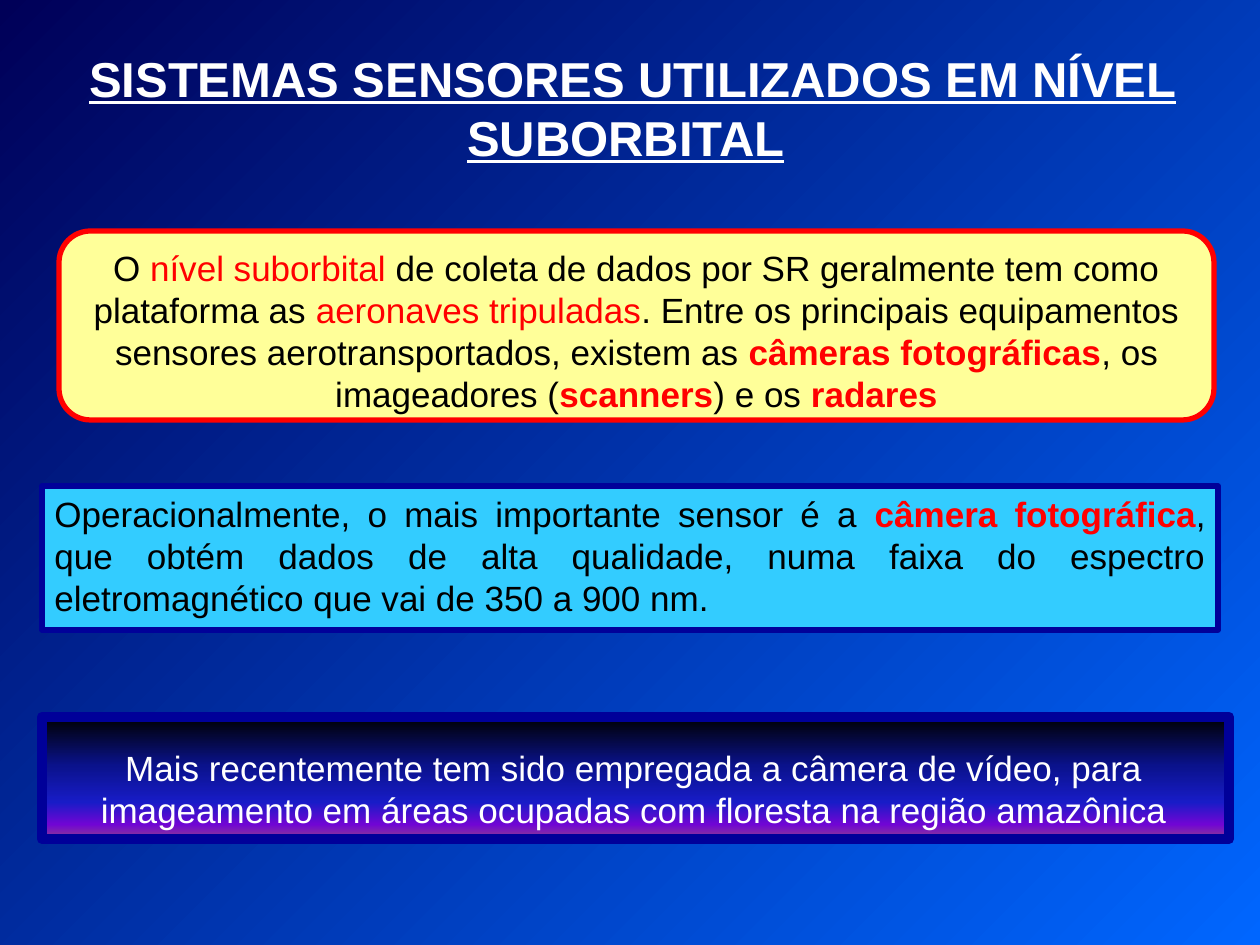
from pptx import Presentation
from pptx.dml.color import RGBColor
from pptx.enum.shapes import MSO_SHAPE
from pptx.enum.text import MSO_ANCHOR, PP_ALIGN
from pptx.oxml.ns import qn
from pptx.util import Emu, Pt
from lxml.etree import SubElement

PX = 914400 / 126
WHITE, BLACK, RED = "FFFFFF", "000000", "FF0000"


def px(n):
    return Emu(round(n * PX))


def rgb(color):
    return RGBColor.from_string(color)


def set_gradient(fill, element, stops, angle):
    """Fill with (percent, colour) stops; the angle runs clockwise."""
    fill.gradient()
    fill.gradient_angle = 360 - angle
    stop_list = next(element.iter(qn("a:gsLst")))
    for old in list(stop_list):
        stop_list.remove(old)
    for percent, color in stops:
        stop = SubElement(stop_list, qn("a:gs"), pos=str(percent * 1000))
        SubElement(stop, qn("a:srgbClr"), val=color)


class Deck:
    font = "Arial"

    def __init__(self, width, height):
        self.prs = Presentation()
        self.prs.slide_width, self.prs.slide_height = px(width), px(height)
        self.s = self.prs.slides.add_slide(self.prs.slide_layouts[6])

    def background(self, stops, angle):
        set_gradient(self.s.background.fill, self.s._element, stops, angle)

    def box(self, kind, rect, line, weight, fill=None):
        sp = self.s.shapes.add_shape(kind, *map(px, rect))
        sp.shadow.inherit = False
        sp.line.color.rgb = rgb(line)
        sp.line.width = Pt(weight)
        if fill:
            sp.fill.solid()
            sp.fill.fore_color.rgb = rgb(fill)
        return sp

    def gradient_box(self, kind, rect, line, weight, stops, angle):
        sp = self.box(kind, rect, line, weight)
        set_gradient(sp.fill, sp._element, stops, angle)

    def text_box(self, rect):
        return self.s.shapes.add_textbox(*map(px, rect))

    def paragraph(self, sp, text, color, size=20, align=PP_ALIGN.CENTER):
        """Fill the shape's first paragraph; |red| and *bold red* mark emphasis."""
        tf = sp.text_frame
        tf.word_wrap = True
        tf.vertical_anchor = MSO_ANCHOR.TOP
        p = tf.paragraphs[0]
        p.alignment = align
        p.font.name, p.font.size = self.font, Pt(size)
        for i, bold_part in enumerate(text.split("*")):
            for j, part in enumerate(bold_part.split("|")):
                if part:
                    r = p.add_run()
                    r.text = part
                    r.font.bold = i % 2 == 1
                    r.font.color.rgb = rgb(RED if i % 2 or j % 2 else color)
        return p


def main():
    deck = Deck(1260, 945)
    deck.background([(0, "000058"), (100, "0066FF")], 45)

    title = deck.paragraph(deck.text_box((-4, 42, 1273, 130)),
                           "SISTEMAS SENSORES UTILIZADOS EM NÍVEL SUBORBITAL", WHITE, 28)
    title.runs[0].font.bold = title.runs[0].font.underline = True
    title.add_run().text = " "

    camera = deck.box(MSO_SHAPE.RECTANGLE, (42, 486, 1176, 144), "010199", 3, "33CCFF")
    deck.paragraph(camera,
                   "Operacionalmente, o mais importante sensor é a *câmera fotográfica*, "
                   "que obtém dados de alta qualidade, numa faixa do espectro "
                   "eletromagnético que vai de 350 a 900 nm.",
                   BLACK, align=PP_ALIGN.JUSTIFY)

    level = deck.box(MSO_SHAPE.FLOWCHART_ALTERNATE_PROCESS, (59, 231, 1155, 189),
                     RED, 3, "FFFF99")
    deck.paragraph(level,
                   "O |nível suborbital| de coleta de dados por SR geralmente tem como "
                   "plataforma as |aeronaves tripuladas|. Entre os principais equipamentos "
                   "sensores aerotransportados, existem as *câmeras fotográficas*, os "
                   "imageadores (*scanners*) e os *radares*", BLACK)

    deck.gradient_box(MSO_SHAPE.RECTANGLE, (42, 717, 1187, 122), "000099", 6,
                      [(0, "000000"), (40, "0A128C"), (70, "181CC7"),
                       (88, "7005D4"), (100, "8C3D91")], 90)
    deck.paragraph(deck.text_box((62, 740, 1144, 97)),
                   "Mais recentemente tem sido empregada a câmera de vídeo, para "
                   "imageamento em áreas ocupadas com floresta na região amazônica", WHITE)

    deck.prs.save("out.pptx")


if __name__ == "__main__":
    main()
